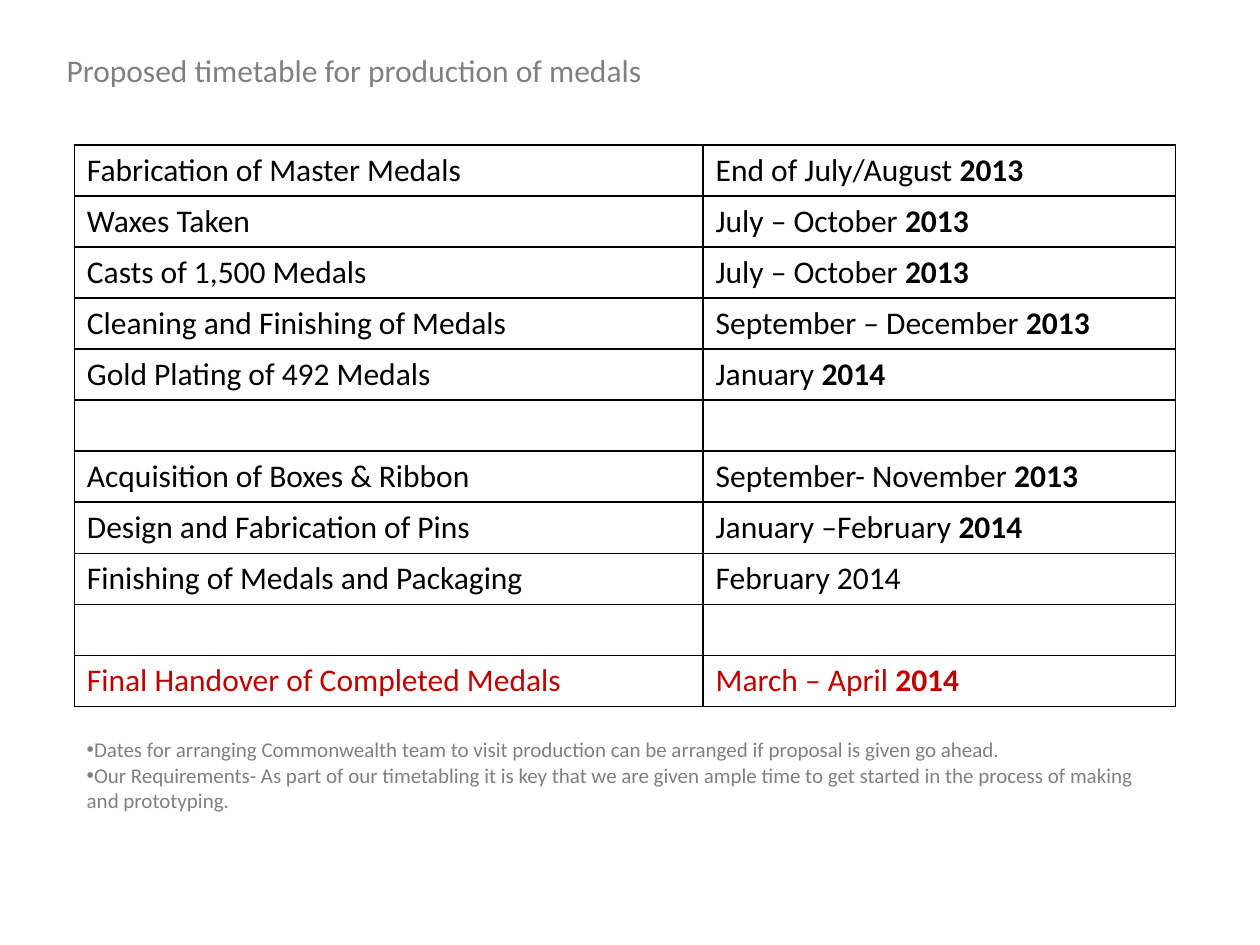
from dataclasses import dataclass

from lxml.etree import SubElement
from pptx import Presentation
from pptx.dml.color import RGBColor
from pptx.enum.text import MSO_AUTO_SIZE
from pptx.oxml.ns import qn
from pptx.util import Inches, Pt


@dataclass(frozen=True)
class Theme:
    font: str = "Calibri"
    grey: str = "808080"
    black: str = "000000"
    red: str = "C00000"
    white: str = "FFFFFF"
    body_size: int = 18
    note_size: int = 12


theme = Theme()


def style_paragraph(paragraph, size, color):
    paragraph.font.name = theme.font
    paragraph.font.size = Pt(size)
    paragraph.font.color.rgb = RGBColor.from_string(color)


def add_text_frame(slide, left, top, width, height):
    text_box = slide.shapes.add_textbox(
        Inches(left), Inches(top), Inches(width), Inches(height)
    )
    text_frame = text_box.text_frame
    text_frame.word_wrap = True
    text_frame.auto_size = MSO_AUTO_SIZE.SHAPE_TO_FIT_TEXT
    return text_frame


presentation = Presentation()
presentation.slide_width = Inches(10)
presentation.slide_height = Inches(7.5)
slide = presentation.slides.add_slide(presentation.slide_layouts[6])

title = add_text_frame(slide, 0.43, 0.36, 6.38, 0.4).paragraphs[0]
title.text = "Proposed timetable for production of medals"
style_paragraph(title, theme.body_size, theme.grey)

timetable = [
    ("Fabrication of Master Medals", "End of July/August ", "2013"),
    ("Waxes Taken", "July – October ", "2013"),
    ("Casts of 1,500 Medals", "July – October ", "2013"),
    ("Cleaning and Finishing of Medals", "September – December ", "2013"),
    ("Gold Plating of 492 Medals", "January ", "2014"),
    ("", "", ""),
    ("Acquisition of Boxes & Ribbon", "September- November ", "2013"),
    ("Design and Fabrication of Pins", "January –February ", "2014"),
    ("Finishing of Medals and Packaging", "February 2014", ""),
    ("", "", ""),
    ("Final Handover of Completed Medals", "March – April ", "2014"),
]
table = slide.shapes.add_table(
    len(timetable), 2, Inches(0.59), Inches(1.15), Inches(8.74), Inches(4.46)
).table
table.first_row = False
table.horz_banding = False
table.columns[0].width = Inches(4.99)
table.columns[1].width = Inches(3.75)

for row_index, (task, period, year) in enumerate(timetable):
    is_last = row_index == len(timetable) - 1
    color = theme.red if is_last else theme.black
    for column_index, parts in enumerate([(task, ""), (period, year)]):
        cell = table.cell(row_index, column_index)
        paragraph = cell.text_frame.paragraphs[0]
        style_paragraph(paragraph, theme.body_size, color)
        for part, bold in zip(parts, (False, True)):
            if part:
                run = paragraph.add_run()
                run.text = part
                run.font.bold = bold

        properties = cell._tc.get_or_add_tcPr()
        for side in ("a:lnL", "a:lnR", "a:lnT", "a:lnB"):
            border = SubElement(properties, qn(side), w=str(Pt(1)))
            border_fill = SubElement(border, qn("a:solidFill"))
            SubElement(border_fill, qn("a:srgbClr"), val=theme.black)
        cell.fill.solid()
        cell.fill.fore_color.rgb = RGBColor.from_string(theme.white)

notes = [
    "Dates for arranging Commonwealth team to visit production can be arranged "
    "if proposal is given go ahead.",
    "Our Requirements- As part of our timetabling it is key that we are given "
    "ample time to get started in the process of making and prototyping.",
]
notes_frame = add_text_frame(slide, 0.59, 5.8, 8.74, 0.91)
for index, note in enumerate(notes):
    paragraph = notes_frame.add_paragraph() if index else notes_frame.paragraphs[0]
    paragraph.text = note
    paragraph_properties = paragraph._p.get_or_add_pPr()
    SubElement(paragraph_properties, qn("a:buFont"), typeface="Arial")
    SubElement(paragraph_properties, qn("a:buChar"), char="•")
    style_paragraph(paragraph, theme.note_size, theme.grey)

presentation.save("out.pptx")
